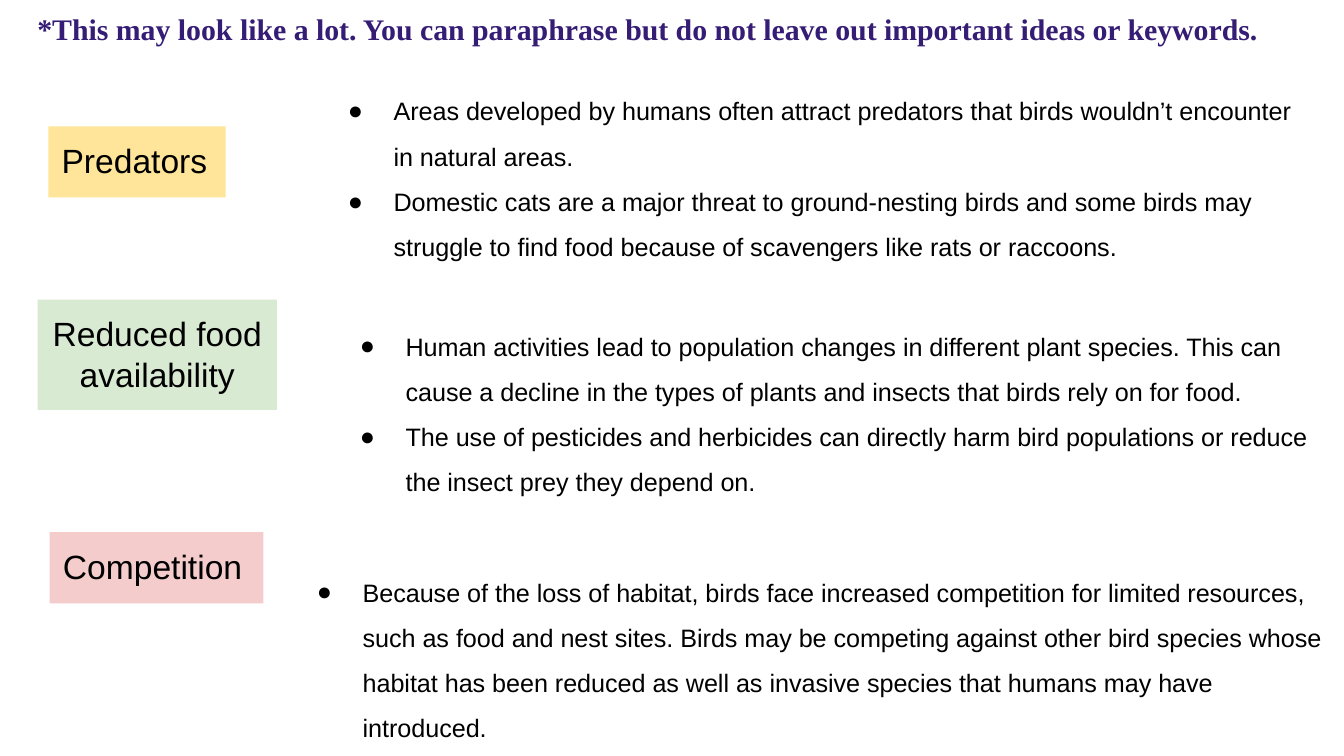
"""Build a slide on three threats that birds face near humans."""
from lxml import etree
from pptx import Presentation
from pptx.dml.color import RGBColor
from pptx.enum.shapes import MSO_SHAPE
from pptx.enum.text import MSO_ANCHOR, MSO_AUTO_SIZE, PP_ALIGN
from pptx.oxml.ns import qn
from pptx.util import Inches, Pt

RECT = MSO_SHAPE.RECTANGLE
TOP = MSO_ANCHOR.TOP
GROW = MSO_AUTO_SIZE.SHAPE_TO_FIT_TEXT
LEFT, CENTER = PP_ALIGN.LEFT, PP_ALIGN.CENTER

THEME = {
    "ink": "000000", "note": "351C75",
    "sans": "Arial", "serif": "Times New Roman",
    "label": 18, "body": 13.5, "head": 16,
    "pad": 0.1, "indent": 0.5, "hang": -0.34, "lines": 1.5,
}

NOTE = ("*This may look like a lot. You can paraphrase but do not leave out "
        "important ideas or keywords.")
NOTE_BOX = (0.18, -0.02, 9.44, 0.43)

THREATS = [
    {"label": "Predators", "fill": "FFE599", "align": LEFT,
     "tag": (0.36, 0.94, 1.32, 0.53), "box": (2.33, 0.5, 7.49, 1.45),
     "points": [
         "Areas developed by humans often attract predators that birds "
         "wouldn’t encounter in natural areas.",
         "Domestic cats are a major threat to ground-nesting birds and some "
         "birds may struggle to find food because of scavengers like rats "
         "or raccoons."]},
    {"label": "Reduced food availability", "fill": "D9EAD3", "align": CENTER,
     "tag": (0.28, 2.23, 1.78, 0.82), "box": (2.42, 2.25, 7.56, 1.45),
     "points": [
         "Human activities lead to population changes in different plant "
         "species. This can cause a decline in the types of plants and "
         "insects that birds rely on for food.",
         "The use of pesticides and herbicides can directly harm bird "
         "populations or reduce the insect prey they depend on."]},
    {"label": "Competition", "fill": "F4CCCC", "align": LEFT,
     "tag": (0.37, 3.96, 1.59, 0.53), "box": (2.1, 4.08, 7.88, 1.45),
     "points": [
         "Because of the loss of habitat, birds face increased competition "
         "for limited resources, such as food and nest sites. Birds may be "
         "competing against other bird species whose habitat has been "
         "reduced as well as invasive species that humans may have "
         "introduced."]},
]


def set_frame(shape):
    frame = shape.text_frame
    frame.word_wrap = True
    frame.vertical_anchor = TOP
    pad = Inches(THEME["pad"])
    frame.margin_left = frame.margin_right = pad
    frame.margin_top = frame.margin_bottom = pad
    return frame


def set_font(para, size, face="sans", color="ink", bold=False):
    font = para.font
    font.name, font.size, font.bold = THEME[face], Pt(THEME[size]), bold
    font.color.rgb = RGBColor.from_string(THEME[color])


def add_bullet(para):
    props = para._p.get_or_add_pPr()
    props.set("marL", str(Inches(THEME["indent"])))
    props.set("indent", str(Inches(THEME["hang"])))
    para.line_spacing = THEME["lines"]
    tint = etree.SubElement(props, qn("a:buClr"))
    etree.SubElement(tint, qn("a:srgbClr"), val=THEME["ink"])
    etree.SubElement(props, qn("a:buFont"), typeface=THEME["sans"])
    etree.SubElement(props, qn("a:buChar"), char="●")


def add_tag(slide, threat):
    shape = slide.shapes.add_shape(RECT, *map(Inches, threat["tag"]))
    shape.shadow.inherit = False
    shape.fill.solid()
    shape.fill.fore_color.rgb = RGBColor.from_string(threat["fill"])
    shape.line.fill.background()
    para = set_frame(shape).paragraphs[0]
    para.text, para.alignment = threat["label"], threat["align"]
    set_font(para, "label")


def add_points(slide, threat):
    frame = set_frame(slide.shapes.add_textbox(*map(Inches, threat["box"])))
    frame.auto_size = GROW
    for i, point in enumerate(threat["points"]):
        para = frame.add_paragraph() if i else frame.paragraphs[0]
        para.text = point
        add_bullet(para)
        set_font(para, "body")


def add_note(slide):
    frame = set_frame(slide.shapes.add_textbox(*map(Inches, NOTE_BOX)))
    para = frame.paragraphs[0]
    para.text = NOTE
    set_font(para, "head", "serif", "note", True)


def main():
    deck = Presentation()
    deck.slide_width = Inches(10)
    deck.slide_height = deck.slide_width * 9 // 16
    slide = deck.slides.add_slide(deck.slide_layouts[6])
    for add in (add_tag, add_points):
        for threat in THREATS:
            add(slide, threat)
    add_note(slide)
    deck.save("out.pptx")


if __name__ == "__main__":
    main()
